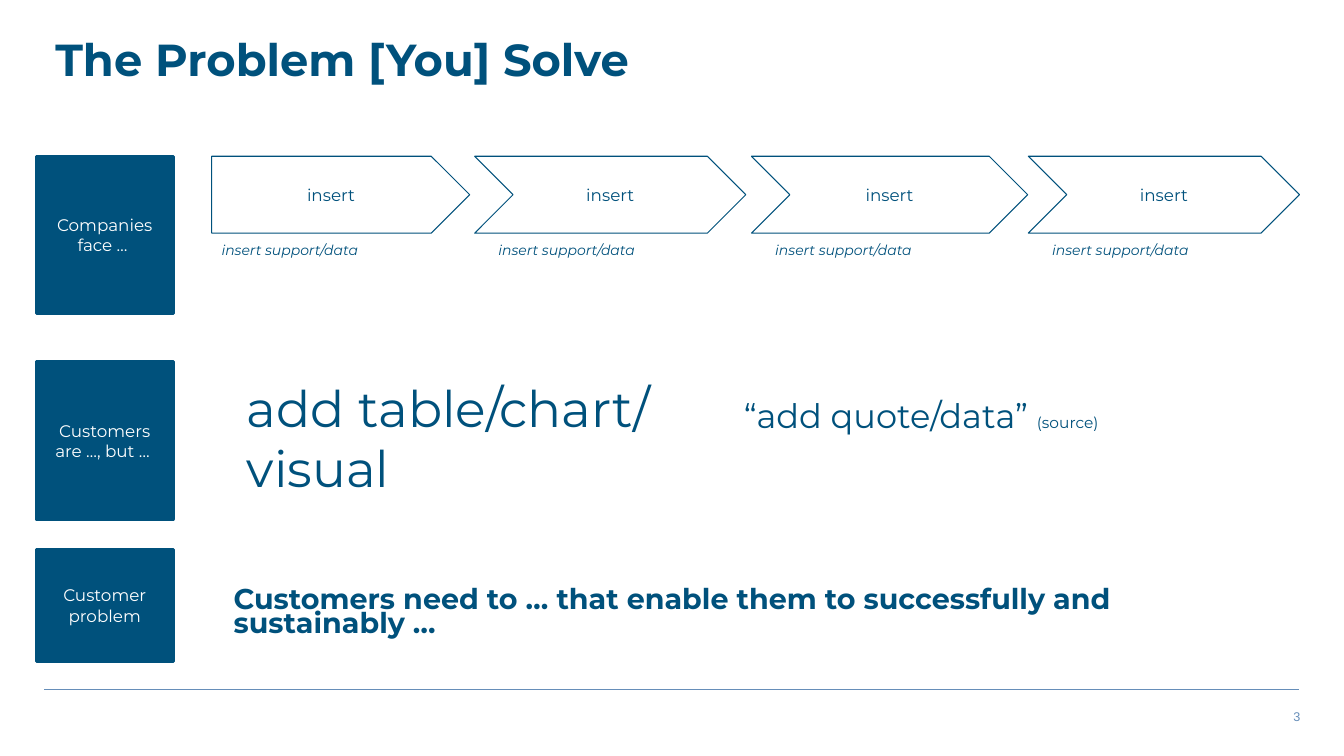
from dataclasses import dataclass

from lxml import etree
from pptx import Presentation
from pptx import util as u
from pptx.dml import color
from pptx.enum import shapes, text
from pptx.oxml import ns


@dataclass(frozen=True)
class Theme:
    font: str = "Montserrat"
    number_font: str = "Arial"
    navy: str = "00517C"
    rule: str = "668EB9"
    white: str = "FFFFFF"
    title: float = 32
    visual: float = 36
    quote: float = 24
    need: float = 20.4
    label: float = 12
    source: float = 11
    note: float = 10
    number: float = 9


THEME = Theme()


@dataclass(frozen=True)
class Area:
    left: float
    top: float
    width: float
    height: float


@dataclass(frozen=True)
class Block:
    area: Area
    wording: str
    kind: shapes.MSO_SHAPE = shapes.MSO_SHAPE.RECTANGLE
    fill: str = THEME.navy
    ink: str = THEME.white
    line_width: float = 2.25


@dataclass(frozen=True)
class Caption:
    area: Area
    wording: str
    size: float
    bold: bool = False
    italic: bool = False
    spacing: float = 1.0
    inset: float = 7.2
    ink: str = THEME.navy
    font: str = THEME.font
    align: text.PP_ALIGN = text.PP_ALIGN.LEFT
    aside: str = ""


def rgb(value: str) -> color.RGBColor:
    return color.RGBColor.from_string(value)


def place(area: Area) -> tuple:
    return u.Pt(area.left), u.Pt(area.top), u.Pt(area.width), u.Pt(area.height)


def set_frame(frame, inset: float, anchor) -> None:
    frame.word_wrap = True
    frame.vertical_anchor = anchor
    frame.margin_left = frame.margin_right = u.Pt(7.2)
    frame.margin_top = frame.margin_bottom = u.Pt(inset)


def set_font(font, name: str, size: float, ink: str) -> None:
    font.name = name
    font.size = u.Pt(size)
    font.color.rgb = rgb(ink)


def draw_block(page, block: Block) -> None:
    box = page.shapes.add_shape(block.kind, *place(block.area))
    box.shadow.inherit = False
    box.fill.solid()
    box.fill.fore_color.rgb = rgb(block.fill)
    box.line.color.rgb = rgb(THEME.navy)
    box.line.width = u.Pt(block.line_width)
    set_frame(box.text_frame, 7.2, text.MSO_ANCHOR.MIDDLE)
    para = box.text_frame.paragraphs[0]
    para.text = block.wording
    para.alignment = text.PP_ALIGN.CENTER
    set_font(para.font, THEME.font, THEME.label, block.ink)


def draw_caption(page, caption: Caption) -> None:
    box = page.shapes.add_textbox(*place(caption.area))
    set_frame(box.text_frame, caption.inset, text.MSO_ANCHOR.TOP)
    para = box.text_frame.paragraphs[0]
    para.text = caption.wording
    para.alignment = caption.align
    para.line_spacing = caption.spacing
    set_font(para.font, caption.font, caption.size, caption.ink)
    para.font.bold = caption.bold
    para.font.italic = caption.italic
    if caption.aside:
        span = para.add_run()
        span.text = caption.aside
        span.font.size = u.Pt(THEME.source)


def draw_footer_rule(page) -> None:
    rule = page.shapes.add_connector(
        shapes.MSO_CONNECTOR.STRAIGHT, u.Pt(31.7), u.Pt(492.5), u.Pt(928), u.Pt(492.5))
    rule.line.color.rgb = rgb(THEME.rule)
    rule.line.width = u.Pt(1)
    etree.SubElement(rule._element.spPr, ns.qn("a:effectLst"))


ROW_LABELS = [
    Block(Area(25.9, 111.6, 97.9, 112.3), "Companies face … "),
    Block(Area(25.9, 258.5, 97.9, 112.3), "Customers are …, but … "),
    Block(Area(25.9, 392.4, 97.9, 79.9), "Customer problem"),
]

STEP_LEFT, STEP_PITCH, CHEVRON_SHIFT = 151.2, 197.75, 9.9
STEP_WIDTHS = [184.3, 193.7, 197.3, 193.7]

CAPTIONS = [
    Caption(Area(32.4, 23.8, 613.4, 54.7), "The Problem [You] Solve", THEME.title,
            bold=True, spacing=0.9, inset=3.6),
    Caption(Area(524.2, 281.5, 403.9, 54.7), "“add quote/data” ", THEME.quote,
            spacing=0.9, inset=3.6, aside="(source)"),
    Caption(Area(159.8, 418.3, 756, 41.8),
            "Customers need to … that enable them to successfully and sustainably …",
            THEME.need, bold=True, spacing=0.7, inset=3.6),
    Caption(Area(169.2, 262.1, 307.4, 101.5), "add table/chart/ visual", THEME.visual),
    Caption(Area(552.2, 502.6, 383.8, 18), "3", THEME.number, inset=3.6,
            ink=THEME.rule, font=THEME.number_font, align=text.PP_ALIGN.RIGHT),
]


def draw_steps(page) -> None:
    for index, width in enumerate(STEP_WIDTHS):
        left = STEP_LEFT + index * STEP_PITCH
        kind = shapes.MSO_SHAPE.CHEVRON if index else shapes.MSO_SHAPE.PENTAGON
        shift = CHEVRON_SHIFT if index else 0
        draw_block(page, Block(Area(left - shift, 111.6, width, 54.9), "insert", kind,
                               THEME.white, THEME.navy, 0.75))
        draw_caption(page, Caption(Area(left, 166.3, 184.3, 22.3), "insert support/data",
                                   THEME.note, italic=True))


def main() -> None:
    deck = Presentation()
    deck.slide_width, deck.slide_height = u.Pt(960), u.Pt(540)
    page = deck.slides.add_slide(deck.slide_layouts[6])
    draw_footer_rule(page)
    draw_steps(page)
    for block in ROW_LABELS:
        draw_block(page, block)
    for caption in CAPTIONS:
        draw_caption(page, caption)
    deck.save("out.pptx")


if __name__ == "__main__":
    main()
